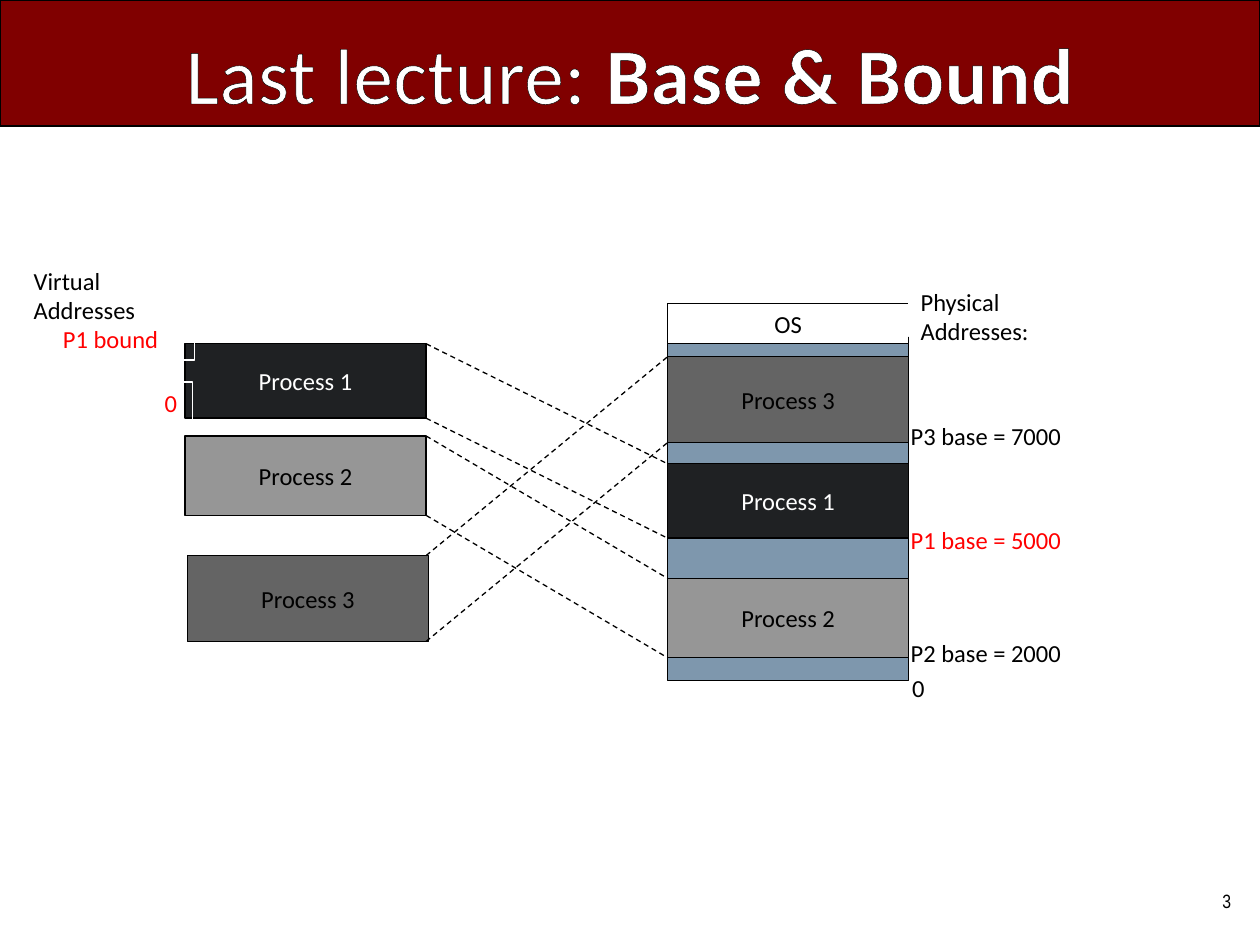
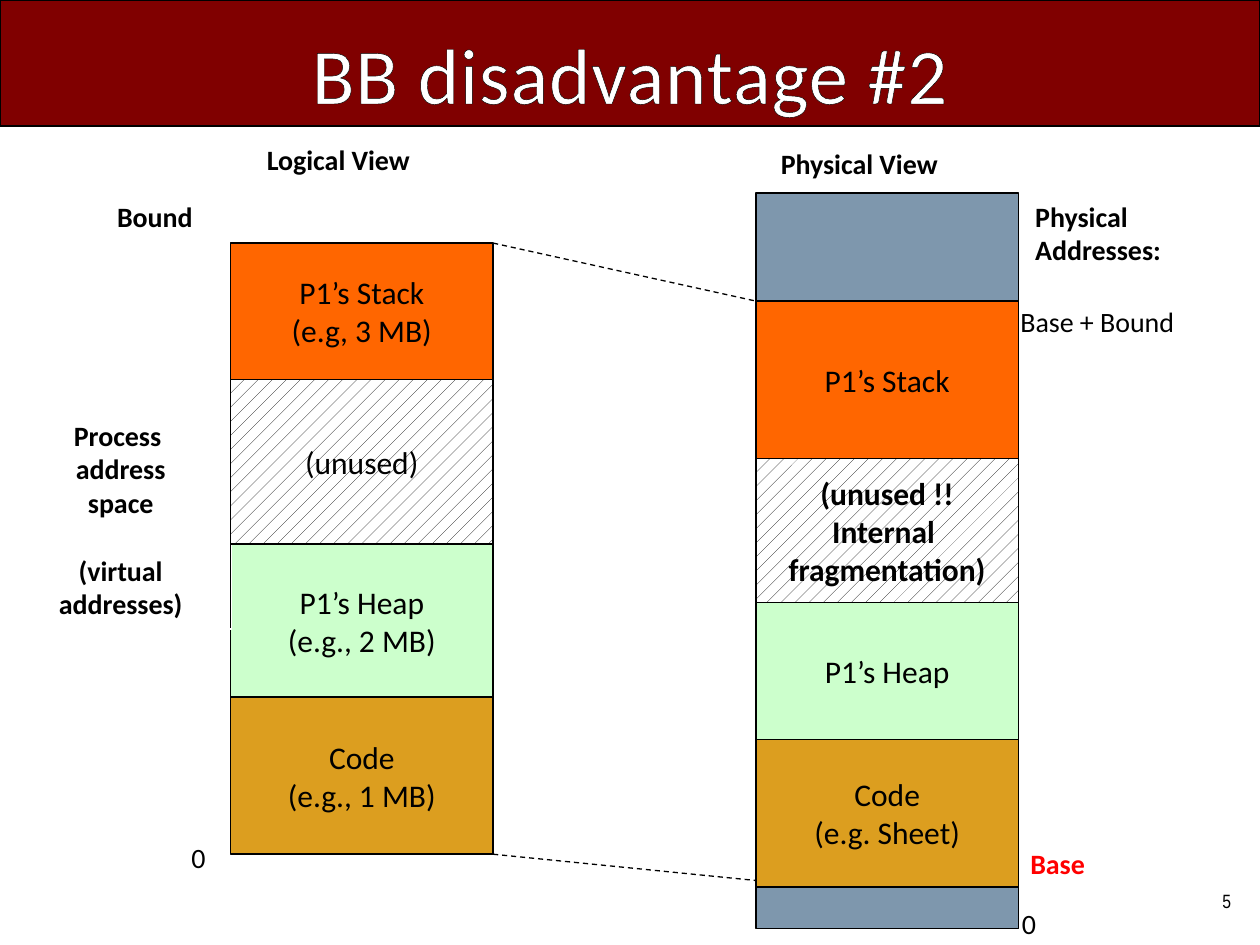
from dataclasses import dataclass
from itertools import accumulate

from lxml.etree import SubElement
from pptx import Presentation
from pptx.dml.color import RGBColor
from pptx.enum.dml import MSO_LINE_DASH_STYLE as Dash, MSO_PATTERN_TYPE as Pattern
from pptx.enum.shapes import MSO_CONNECTOR as Connector, MSO_SHAPE as Preset
from pptx.enum.text import MSO_ANCHOR as Anchor, MSO_AUTO_SIZE as AutoSize, PP_ALIGN as Align
from pptx.oxml.ns import qn
from pptx.util import Cm, Pt

BLACK, WHITE, RED = "000000", "FFFFFF", "FF0000"
BANNER, MEMORY = "800000", "7E97AD"
DARK, MEDIUM, LIGHT = "1F2123", "646464", "969696"
STACK, HEAP, CODE, HATCH = "FF6600", "CCFFCC", "DC9E1F", "hatch"
BODY_FONT, NUMBER_FONT = "Calibri", "Arial Narrow"
SLIDE_WIDTH, SLIDE_HEIGHT = 25.4, 19.05
LINE_WIDTH = 0.75


@dataclass(frozen=True)
class TextStyle:
    """Look of a run of text."""
    size: float
    color: str = BLACK
    bold: bool = False
    font: str = BODY_FONT


@dataclass(frozen=True)
class Block:
    """A filled and outlined region of memory, in centimetres."""
    left: float
    top: float
    width: float
    height: float
    fill: str
    lines: tuple[str, ...] = ()
    style: TextStyle = TextStyle(18)


@dataclass(frozen=True)
class Label:
    """A caption that grows with its text, in centimetres."""
    lines: tuple[str, ...]
    left: float
    top: float
    width: float
    height: float
    style: TextStyle
    framed: bool = False
    wrap: bool = False
    align: Align = Align.LEFT
    gap_before: int | None = None


@dataclass(frozen=True)
class Process:
    """A process with its places in virtual and physical memory."""
    name: str
    fill: str
    virtual_left: float
    virtual_top: float
    physical_top: float
    height: float
    color: str = BLACK


@dataclass(frozen=True)
class Segment:
    """One part of an address space, stacked from the top."""
    lines: tuple[str, ...]
    height: float
    fill: str
    bold: bool = False


def rgb(value: str) -> RGBColor:
    """Turn a hex string into a colour."""
    return RGBColor.from_string(value)


def add_run(paragraph, text: str, style: TextStyle):
    """Append a styled run to a paragraph."""
    run = paragraph.add_run()
    run.text = text
    run.font.name = style.font
    run.font.size = Pt(style.size)
    run.font.bold = style.bold
    run.font.color.rgb = rgb(style.color)
    return run


def write_lines(frame, lines: tuple[str, ...], style: TextStyle, align: Align) -> None:
    """Write one paragraph for each line."""
    for index, line in enumerate(lines):
        paragraph = frame.paragraphs[0] if index == 0 else frame.add_paragraph()
        paragraph.alignment = align
        add_run(paragraph, line, style)


def set_outline(shape, color: str) -> None:
    """Give a shape or connector a thin outline."""
    shape.line.color.rgb = rgb(color)
    shape.line.width = Pt(LINE_WIDTH)


def add_block(slide, block: Block):
    """Draw a memory region with centred text."""
    shape = slide.shapes.add_shape(
        Preset.RECTANGLE, Cm(block.left), Cm(block.top), Cm(block.width), Cm(block.height))
    shape.shadow.inherit = False
    set_outline(shape, BLACK)
    if block.fill == HATCH:
        shape.fill.patterned()
        shape.fill.pattern = Pattern.PERCENT_10
        shape.fill.fore_color.rgb = rgb(BLACK)
        shape.fill.back_color.rgb = rgb(WHITE)
    else:
        shape.fill.solid()
        shape.fill.fore_color.rgb = rgb(block.fill)
    frame = shape.text_frame
    frame.word_wrap = False
    frame.vertical_anchor = Anchor.MIDDLE
    write_lines(frame, block.lines, block.style, Align.CENTER)
    return shape


def add_label(slide, label: Label) -> None:
    """Draw a caption, with a white frame if it has one."""
    shape = slide.shapes.add_textbox(
        Cm(label.left), Cm(label.top), Cm(label.width), Cm(label.height))
    if label.framed:
        set_outline(shape, WHITE)
    frame = shape.text_frame
    frame.word_wrap = label.wrap
    frame.auto_size = AutoSize.SHAPE_TO_FIT_TEXT
    write_lines(frame, label.lines, label.style, label.align)
    if label.gap_before is not None:
        frame.paragraphs[label.gap_before].space_before = Pt(label.style.size * 1.22)


def add_mapping_line(slide, left: float, top: float, right: float, bottom: float) -> None:
    """Draw a dashed line from one address space to another."""
    connector = slide.shapes.add_connector(
        Connector.STRAIGHT, Cm(left), Cm(top), Cm(right), Cm(bottom))
    set_outline(connector, BLACK)
    connector.line.dash_style = Dash.DASH
    SubElement(connector._element.spPr, qn("a:effectLst"))


def add_lecture_slide(presentation, number: int, title: str, emphasis: str = ""):
    """Add a slide with the title banner and the slide number."""
    slide = presentation.slides.add_slide(presentation.slide_layouts[6])
    banner = add_block(slide, Block(0, 0, SLIDE_WIDTH, 2.54, BANNER))
    frame = banner.text_frame
    frame.word_wrap = True
    frame.vertical_anchor = Anchor.BOTTOM
    paragraph = frame.paragraphs[0]
    paragraph.alignment = Align.CENTER
    for text, bold in ((title, False), (emphasis, True)):
        if text:
            run = add_run(paragraph, text, TextStyle(45, WHITE, bold))
            properties = run.font._element
            properties.set("spc", "50")
            outline = SubElement(properties, qn("a:ln"), w=str(Pt(1)))
            fill = SubElement(outline, qn("a:solidFill"))
            SubElement(fill, qn("a:srgbClr"), val=BLACK)
            properties.insert(0, outline)
    number_box = slide.shapes.add_textbox(Cm(22.33), Cm(17.65), Cm(2.74), Cm(1.02))
    number_box.text_frame.word_wrap = True
    number_box.text_frame.vertical_anchor = Anchor.MIDDLE
    write_lines(number_box.text_frame, (str(number),), TextStyle(11, font=NUMBER_FONT), Align.RIGHT)
    return slide


def build_base_and_bound(presentation) -> None:
    """Show three processes mapped into physical memory."""
    slide = add_lecture_slide(presentation, 3, "Last lecture: ", "Base & Bound")
    virtual_left, physical_left, width = 3.73, 13.46, 4.86
    plain, marked = TextStyle(14), TextStyle(14, RED)
    processes = (
        Process("Process 2", LIGHT, virtual_left, 8.79, 11.66, 1.6),
        Process("Process 1", DARK, virtual_left, 6.93, 9.35, 1.5, WHITE),
        Process("Process 3", MEDIUM, 3.78, 11.2, 7.19, 1.73),
    )
    labels = (
        Label(("P2 base = 2000",), 18.11, 12.73, 3.61, 0.86, plain),
        Label(("P1 bound",), 1.02, 6.4, 2.9, 0.86, marked, framed=True),
        Label(("0",), 3.07, 7.7, 0.81, 0.86, marked, framed=True),
        Label(("0",), 18.14, 13.44, 0.69, 0.66, plain),
        Label(("P1 base = 5000",), 18.11, 10.46, 4.27, 0.86, marked),
        Label(("P3 base = 7000",), 18.11, 8.36, 3.61, 0.86, plain),
        Label(("Physical", "Addresses:"), 18.31, 5.66, 2.95, 1.12, plain, framed=True),
        Label(("Virtual", "Addresses"), 0.43, 5.23, 2.82, 1.12, plain, framed=True),
    )
    add_block(slide, Block(physical_left, 6.12, width, 7.6, MEMORY))
    add_block(slide, Block(physical_left, 6.12, width, 0.81, WHITE, ("OS",), plain))
    for process in processes:
        style = TextStyle(14, process.color)
        for left, top in ((process.virtual_left, process.virtual_top),
                          (physical_left, process.physical_top)):
            add_block(slide, Block(left, top, width, process.height,
                                   process.fill, (process.name,), style))
    for label in labels:
        add_label(slide, label)
    for process in processes:
        for offset in (0, process.height):
            add_mapping_line(slide, virtual_left + width, process.virtual_top + offset,
                             physical_left, process.physical_top + offset)


def stack_segments(left: float, top: float, width: float,
                   segments: tuple[Segment, ...]) -> list[Block]:
    """Place segments one below the other."""
    tops = accumulate((segment.height for segment in segments), initial=top)
    return [Block(left, segment_top, width, segment.height, segment.fill,
                  segment.lines, TextStyle(18, bold=segment.bold))
            for segment, segment_top in zip(segments, tops)]


def build_fragmentation(presentation) -> None:
    """Show the unused space inside one process."""
    slide = add_lecture_slide(presentation, 5, "BB disadvantage #2")
    logical_left, physical_left, width = 4.65, 15.24, 5.29
    logical_top, physical_top = 4.9, 6.07
    plain, strong = TextStyle(16), TextStyle(16, bold=True)
    logical = (
        Segment(("P1’s Stack", "(e.g, 3 MB)"), 2.75, STACK),
        Segment(("(unused)",), 3.32, HATCH),
        Segment(("P1’s Heap", "(e.g., 2 MB)"), 3.08, HEAP),
        Segment(("Code", "(e.g., 1 MB)"), 3.17, CODE),
    )
    physical = (
        Segment(("P1’s Stack",), 3.18, STACK),
        Segment(("(unused !!", "Internal ", "fragmentation)"), 2.9, HATCH, bold=True),
        Segment(("P1’s Heap",), 2.76, HEAP),
        Segment(("Code", "(e.g. Sheet)"), 2.97, CODE),
    )
    labels = (
        Label(("0",), 3.61, 16.81, 0.79, 0.94, plain, framed=True),
        Label(("0",), 20.35, 18.16, 0.79, 0.94, plain),
        Label(("Base + Bound",), 20.32, 6.02, 4.78, 0.94, plain, wrap=True),
        Label(("Physical", "Addresses:"), 20.62, 3.89, 3.63, 1.63, strong, framed=True),
        Label(("Process ", "address", "space", "(virtual", "addresses)"), 0.2, 8.31, 4.47, 4.37,
              strong, framed=True, wrap=True, align=Align.CENTER, gap_before=3),
        Label(("Bound",), 2.11, 3.89, 2.57, 0.94, strong, framed=True, wrap=True),
        Label(("Logical View",), 5.13, 2.74, 4.83, 0.94, strong, framed=True, wrap=True),
        Label(("Physical View",), 15.49, 2.82, 4.83, 0.94, strong, framed=True, wrap=True),
        Label(("Base",), 20.52, 16.94, 4.78, 0.94, TextStyle(16, RED, True), wrap=True),
    )
    blocks = (stack_segments(logical_left, logical_top, width, logical)
              + stack_segments(physical_left, physical_top, width, physical))
    add_block(slide, Block(physical_left, 3.89, width, 14.83, MEMORY))
    for block in blocks:
        if block.fill != HATCH:
            add_block(slide, block)
    for label in labels:
        add_label(slide, label)
    for start, end in ((logical_top, physical_top), (17.22, 17.75)):
        add_mapping_line(slide, logical_left + width, start, physical_left, end)
    for block in blocks:
        if block.fill == HATCH:
            add_block(slide, block)


def main() -> None:
    """Build and save the presentation."""
    presentation = Presentation()
    presentation.slide_width = Cm(SLIDE_WIDTH)
    presentation.slide_height = Cm(SLIDE_HEIGHT)
    build_base_and_bound(presentation)
    build_fragmentation(presentation)
    presentation.save("out.pptx")


if __name__ == "__main__":
    main()
